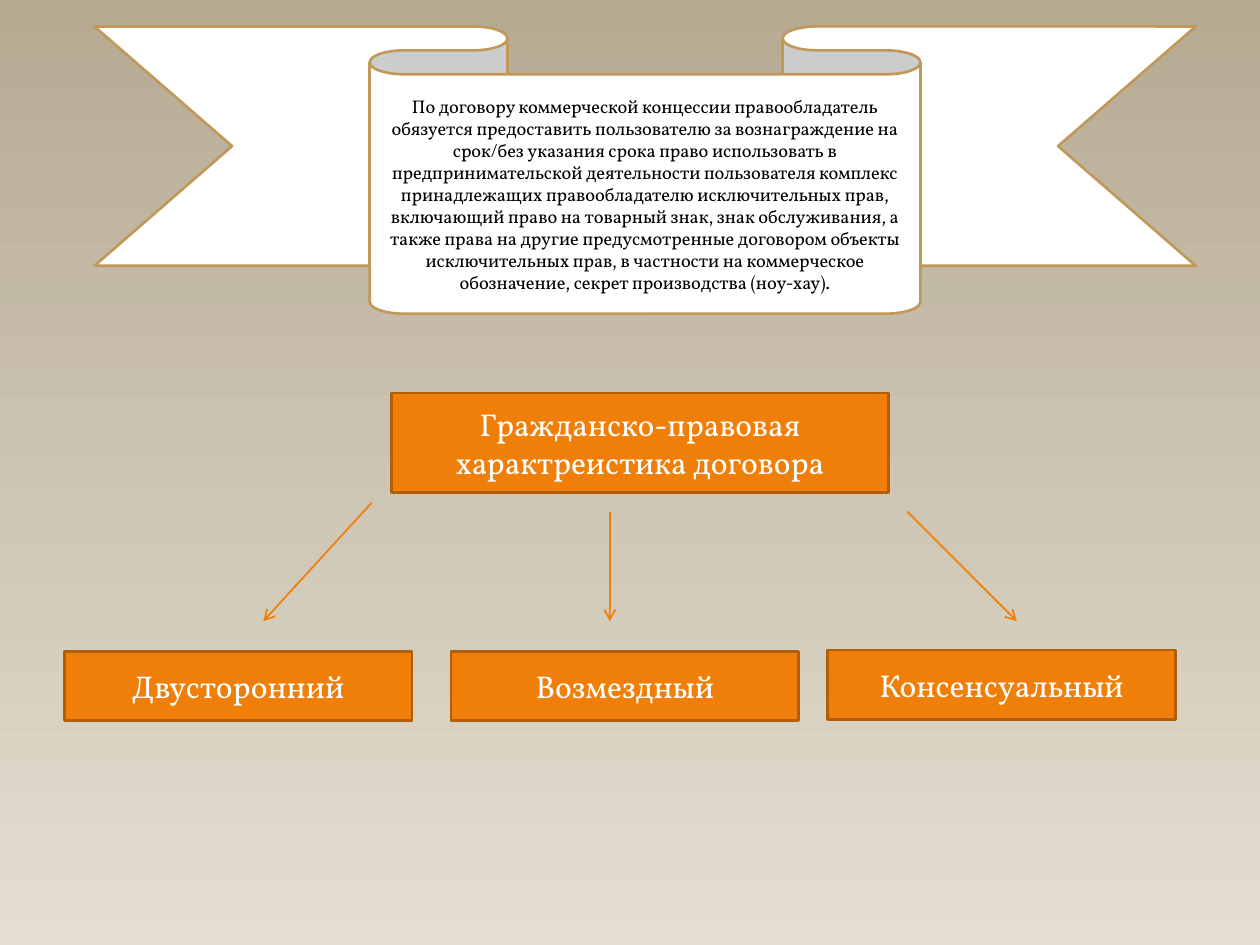
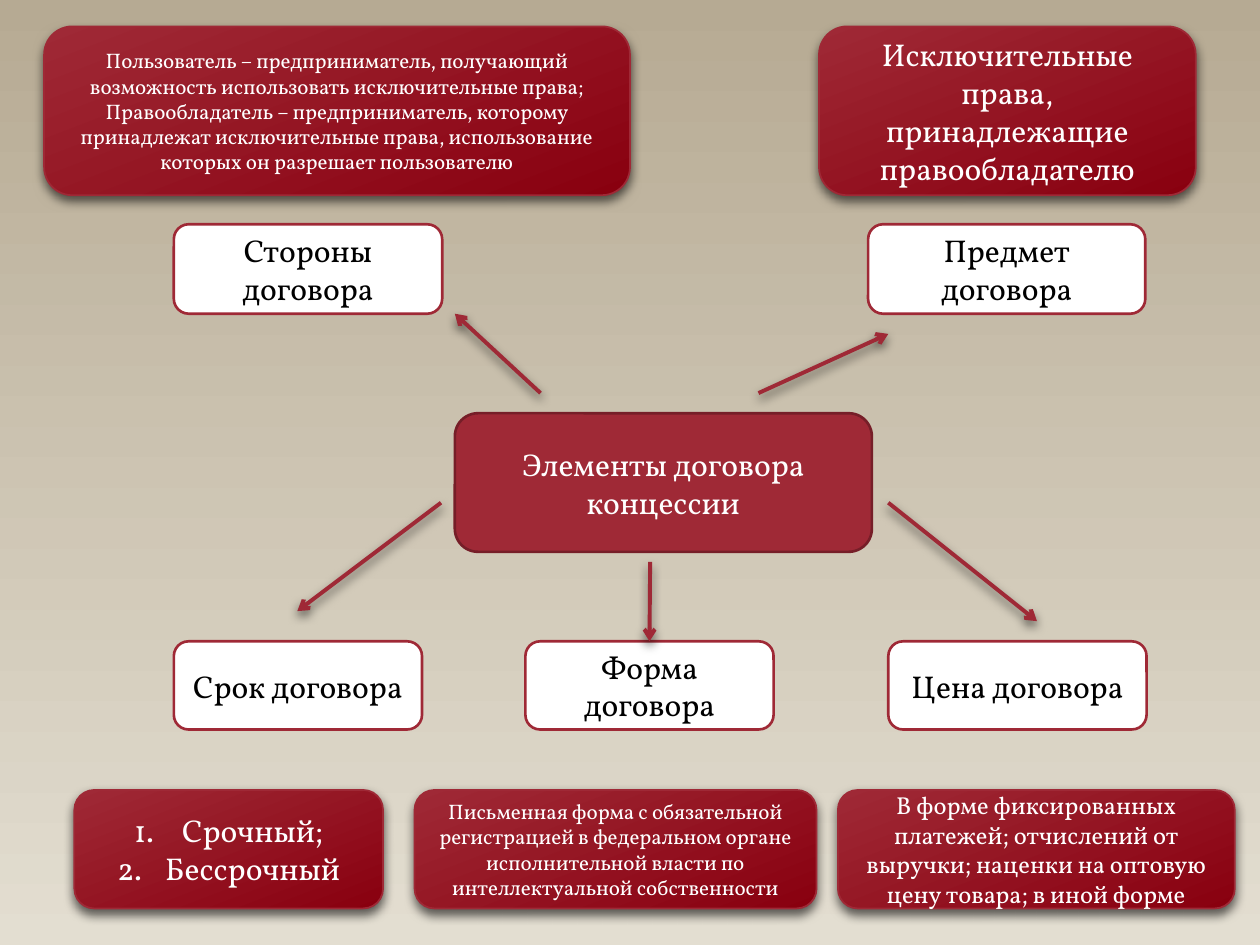
from lxml import etree
from pptx import Presentation
from pptx.dml.color import RGBColor
from pptx.enum.shapes import MSO_CONNECTOR, MSO_SHAPE
from pptx.enum.text import MSO_ANCHOR, PP_ALIGN
from pptx.oxml.ns import qn
from pptx.util import Inches, Pt

RECT = MSO_SHAPE.RECTANGLE
ROUND = MSO_SHAPE.ROUNDED_RECTANGLE
RIBBON = MSO_SHAPE.DOWN_RIBBON
STRAIGHT = MSO_CONNECTOR.STRAIGHT
CENTER, MIDDLE = PP_ALIGN.CENTER, MSO_ANCHOR.MIDDLE

# Shared colours and box styles
HUES = {
    "top": "B6AA93", "sand": "E3DED1", "tan": "C19859",
    "orange": "F07F09", "rust": "B25E07",
    "red": "9F2936", "wine": "761E28", "deep": "89000F",
    "white": "FFFFFF", "black": "000000",
}
RGB = {name: RGBColor.from_string(code) for name, code in HUES.items()}
# A style holds its fill colours (two make a gradient), line, width and text colour
STYLES = {
    "scroll": (["white"], "tan", 1.5, "black"),
    "orange": (["orange"], "rust", 1.5, "white"),
    "core": (["red"], "wine", 1.5, "white"),
    "label": (["white"], "red", 1.5, "black"),
    "note": (["red", "deep"], "red", 1, "white"),
}


def add_box(slide, kind, style, at, size, *lines):
    """Draw a box with centred text."""
    fills, edge, width, ink = STYLES[style]
    box = slide.shapes.add_shape(kind, *map(Inches, at))
    if len(fills) == 1:
        box.fill.solid()
        box.fill.fore_color.rgb = RGB[fills[0]]
    else:
        box.fill.gradient()
        box.fill.gradient_angle = 291
        for stop, hue in zip(box.fill.gradient_stops, fills):
            stop.color.rgb = RGB[hue]
    box.line.color.rgb = RGB[edge]
    box.line.width = Pt(width)
    frame = box.text_frame
    frame.word_wrap = True
    frame.vertical_anchor = MIDDLE
    for i, line in enumerate(lines):
        para = frame.add_paragraph() if i else frame.paragraphs[0]
        para.alignment = CENTER
        run = para.add_run()
        run.text = line
        for key, val in {"name": "Vollkorn", "size": Pt(size)}.items():
            setattr(run.font, key, val)
        run.font.color.rgb = RGB[ink]
    return box


def add_arrow(slide, ends, hue, width):
    """Draw a straight arrow from (x1, y1) to (x2, y2)."""
    arrow = slide.shapes.add_connector(STRAIGHT, *map(Inches, ends))
    arrow.line.color.rgb = RGB[hue]
    arrow.line.width = Pt(width)
    etree.SubElement(arrow.line._get_or_add_ln(), qn("a:tailEnd"), type="arrow")
    return arrow


prs = Presentation()
prs.slide_width, prs.slide_height = Inches(10), Inches(7.5)
blank = prs.slide_layouts[6]

# Shared background
back = prs.slide_master.background.fill
back.gradient()
back.gradient_angle = 270
for stop, hue in zip(back.gradient_stops, ("top", "sand")):
    stop.color.rgb = RGB[hue]

# Slide 1: definition on a ribbon
first = prs.slides.add_slide(blank)
add_box(
    first, RIBBON, "scroll", (0.75, 0.21, 8.74, 2.28), 10.5,
    "По договору коммерческой концессии правообладатель обязуется предоставить "
    "пользователю за вознаграждение на срок/без указания срока право использовать "
    "в предпринимательской деятельности пользователя комплекс принадлежащих "
    "правообладателю исключительных прав, включающий право на товарный знак, знак "
    "обслуживания, а также права на другие предусмотренные договором объекты "
    "исключительных прав, в частности на коммерческое обозначение, секрет "
    "производства (ноу-хау).")

# Contract traits
add_box(first, RECT, "orange", (3.11, 3.12, 3.94, 0.79), 18,
        "Гражданско-правовая характреистика договора")
for left, top, trait in [
    (0.51, 5.17, "Двусторонний"),
    (3.58, 5.17, "Возмездный"),
    (6.57, 5.16, "Консенсуальный"),
]:
    add_box(first, RECT, "orange", (left, top, 2.76, 0.55), 18, trait)
for ends in [(2.95, 3.99, 2.09, 4.93), (4.84, 4.06, 4.84, 4.93),
             (7.2, 4.06, 8.07, 4.93)]:
    add_arrow(first, ends, "orange", 1)

# Slide 2: core and labels
second = prs.slides.add_slide(blank)
add_box(second, ROUND, "core", (3.61, 3.28, 3.31, 1.1), 18,
        "Элементы договора концессии")
labels = {}
for word, at in {
    "Стороны": (1.38, 1.78, 2.13, 0.71),
    "Предмет": (6.89, 1.78, 2.2, 0.71),
    "Срок": (1.38, 5.09, 1.97, 0.7),
    "Форма": (4.17, 5.09, 1.97, 0.7),
    "Цена": (7.05, 5.09, 2.05, 0.7),
}.items():
    labels[word] = add_box(second, ROUND, "label", at, 18, f"{word} договора")

# Notes above and below the labels
notes = [add_box(second, ROUND, "note", *note) for note in [
    ((0.35, 0.21, 4.65, 1.34), 12,
     "Пользователь – предприниматель, получающий возможность использовать "
     "исключительные права;",
     "Правообладатель – предприниматель, которому принадлежат исключительные "
     "права, использование которых он разрешает пользователю"),
    ((6.5, 0.21, 2.99, 1.34), 18,
     "Исключительные права, принадлежащие правообладателю"),
    ((0.59, 6.27, 2.45, 0.94), 18, "Срочный;", "Бессрочный"),
    ((3.29, 6.27, 3.19, 0.94), 12,
     "Письменная форма с обязательной регистрацией в федеральном органе "
     "исполнительной власти по интеллектуальной собственности"),
    ((6.65, 6.27, 3.15, 0.94), 14,
     "В форме фиксированных платежей; отчислений от выручки; наценки на "
     "оптовую цену товара; в иной форме"),
]]

# Numbered list of terms
for para in notes[2].text_frame.paragraphs:
    props = para._p.get_or_add_pPr()
    props.set("marL", str(Inches(0.38)))
    props.set("indent", str(-Inches(0.38)))
    etree.SubElement(props, qn("a:buFont"), typeface="+mj-lt")
    etree.SubElement(props, qn("a:buAutoNum"), type="arabicPeriod")

# Arrows from the core to the labels
arrows = [add_arrow(second, ends, "red", 2.25) for ends in [
    (3.5, 3.99, 2.36, 4.85), (7.05, 3.99, 8.23, 4.93), (5.16, 4.46, 5.16, 5.09),
    (6.02, 3.12, 7.05, 2.65), (4.29, 3.12, 3.61, 2.49),
]]
arrows[2].end_connect(labels["Форма"], 0)

# Shadows: only under the notes and their arrows
raised = [shape.shape_id for shape in notes + arrows]
for slide in prs.slides:
    for shape in slide.shapes:
        effects = etree.SubElement(shape._element.spPr, qn("a:effectLst"))
        if slide.slide_id == second.slide_id and shape.shape_id in raised:
            shade = etree.SubElement(
                effects, qn("a:outerShdw"), blurRad=str(Pt(6)), dist=str(Pt(3)),
                dir="5400000", rotWithShape="0")
            tone = etree.SubElement(shade, qn("a:srgbClr"), val=HUES["black"])
            etree.SubElement(tone, qn("a:alpha"), val="60000")

prs.save("out.pptx")
